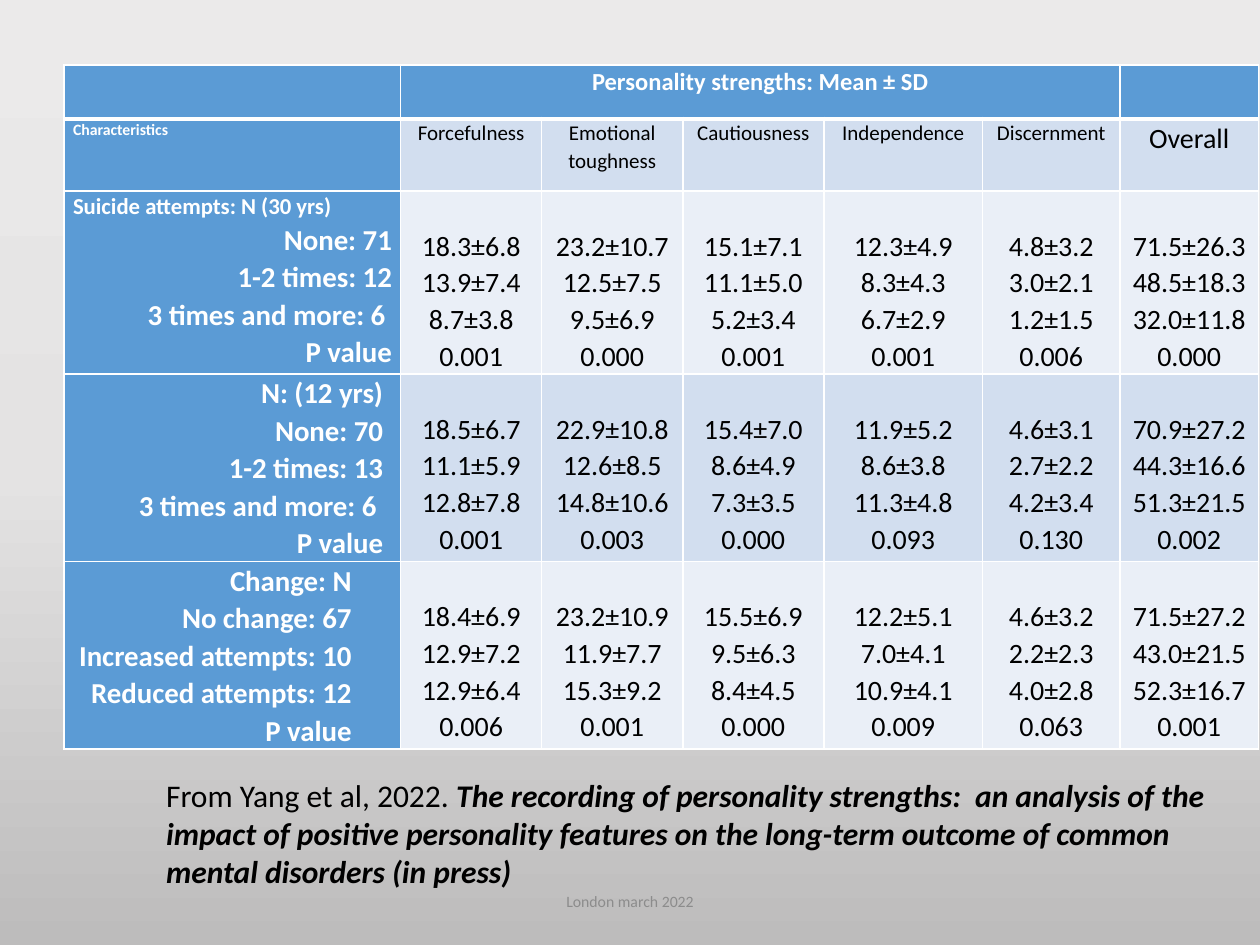
"""Build the slide on personality strengths and suicide attempts."""
import copy
from dataclasses import dataclass

import lxml.etree
import pptx
import pptx.dml.color
import pptx.enum.text
import pptx.oxml.ns
import pptx.util

ALIGN = pptx.enum.text.PP_ALIGN


@dataclass(frozen=True)
class Theme:
    font: str = "Calibri"
    blue: str = "5B9BD5"
    mid: str = "D2DEEF"
    pale: str = "EAEFF7"
    white: str = "FFFFFF"
    black: str = "000000"
    gray: str = "8C8C8C"
    back: tuple = ((0, "EBEAEA"), (0.5, "E4E3E3"), (1, "BDBCBC"))
    tiny: float = 9
    small: float = 12
    group: float = 13
    head: float = 14
    body: float = 16
    label: float = 16.5
    cite: float = 18


@dataclass(frozen=True)
class Style:
    size: float
    color: str
    bold: bool = False
    align: ALIGN = ALIGN.CENTER
    space: float = 1.07


@dataclass(frozen=True)
class Band:
    title: str
    style: Style
    labels: tuple
    values: tuple
    fill: str
    right: float = 0.07
    shift: float = 0


THEME = Theme()
WIDE, HIGH = pptx.util.Inches(10), pptx.util.Inches(7.5)
COLS = (0.267, 0.112, 0.112, 0.112, 0.126, 0.109, 0.11)
ROWS = (0.057, 0.076, 0.173, 0.173, 0.173)
NAMES = ("Forcefulness", "Emotional toughness", "Cautiousness",
         "Independence", "Discernment", "Overall")
HEAD = Style(THEME.head, THEME.white, True)
NAME = Style(THEME.small, THEME.black)
TOTAL = Style(THEME.body, THEME.black)
NOTE = Style(THEME.tiny, THEME.white, True, ALIGN.LEFT)
GROUP = Style(THEME.group, THEME.white, True, ALIGN.LEFT)
LABEL = Style(THEME.label, THEME.white, True, ALIGN.RIGHT)
FOOT = Style(THEME.tiny, THEME.gray, space=1)
CITE = Style(THEME.cite, THEME.black, align=ALIGN.LEFT, space=1)
TIMES = "3 times and more: 6 "
BANDS = (
    Band("Suicide attempts: N (30 yrs)", GROUP,
         ("None: 71", "1-2 times: 12", TIMES, "P value"),
         ("18.3±6.8 13.9±7.4 8.7±3.8 0.001", "23.2±10.7 12.5±7.5 9.5±6.9 0.000",
          "15.1±7.1 11.1±5.0 5.2±3.4 0.001", "12.3±4.9 8.3±4.3 6.7±2.9 0.001",
          "4.8±3.2 3.0±2.1 1.2±1.5 0.006", "71.5±26.3 48.5±18.3 32.0±11.8 0.000"),
         THEME.pale),
    Band("N: (12 yrs)", LABEL,
         ("None: 70", "1-2 times: 13", TIMES, "P value"),
         ("18.5±6.7 11.1±5.9 12.8±7.8 0.001", "22.9±10.8 12.6±8.5 14.8±10.6 0.003",
          "15.4±7.0 8.6±4.9 7.3±3.5 0.000", "11.9±5.2 8.6±3.8 11.3±4.8 0.093",
          "4.6±3.1 2.7±2.2 4.2±3.4 0.130", "70.9±27.2 44.3±16.6 51.3±21.5 0.002"),
         THEME.mid, 0.14),
    Band("Change: N", LABEL,
         ("No change: 67", "Increased attempts: 10", "Reduced attempts: 12", "P value"),
         ("18.4±6.9 12.9±7.2 12.9±6.4 0.006", "23.2±10.9 11.9±7.7 15.3±9.2 0.001",
          "15.5±6.9 9.5±6.3 8.4±4.5 0.000", "12.2±5.1 7.0±4.1 10.9±4.1 0.009",
          "4.6±3.2 2.2±2.3 4.0±2.8 0.063", "71.5±27.2 43.0±21.5 52.3±16.7 0.001"),
         THEME.pale, 0.14, 0.25),
)
LEAD = "From Yang et al, 2022. "
LINES = ("The recording of personality strengths:  an analysis of the",
         "impact of positive personality features on the long-term outcome of common",
         "mental disorders (in press)")


def tint(code: str) -> pptx.dml.color.RGBColor:
    return pptx.dml.color.RGBColor.from_string(code)


def dress(para, style: Style) -> None:
    para.alignment, para.line_spacing = style.align, style.space
    font = para.font
    font.name, font.size, font.bold = THEME.font, pptx.util.Pt(style.size), style.bold
    font.color.rgb = tint(style.color)


def write(frame, lines, style: Style) -> None:
    for num, line in enumerate(lines):
        para = frame.add_paragraph() if num else frame.paragraphs[0]
        para.add_run().text = line
        dress(para, style)


def edge(cell, base: float) -> None:
    props = cell._tc.get_or_add_tcPr()
    name = pptx.oxml.ns.qn
    for side in "LRTB":
        width = base if side == "B" else 1
        line = lxml.etree.SubElement(props, name(f"a:ln{side}"), w=str(pptx.util.Pt(width)))
        fill = lxml.etree.SubElement(line, name("a:solidFill"))
        lxml.etree.SubElement(fill, name("a:srgbClr"), val=THEME.white)


def paint(cell, color: str, base: float = 1) -> None:
    cell.margin_left = cell.margin_right = pptx.util.Inches(0.07)
    cell.margin_top = cell.margin_bottom = 0
    edge(cell, base)
    cell.fill.solid()
    cell.fill.fore_color.rgb = tint(color)


def fill_band(grid, row: int, band: Band) -> None:
    cell = grid.cell(row, 0)
    paint(cell, THEME.blue)
    cell.margin_right = pptx.util.Inches(band.right)
    write(cell.text_frame, (band.title, *band.labels), LABEL)
    first = cell.text_frame.paragraphs[0]
    dress(first, band.style)
    if band.shift:
        first._p.get_or_add_pPr().set("marR", str(pptx.util.Inches(band.shift)))
    for col, text in enumerate(band.values, 1):
        cell = grid.cell(row, col)
        paint(cell, band.fill)
        cell.margin_top = pptx.util.Inches(0.29)
        write(cell.text_frame, text.split(), TOTAL)


def add_grid(slide) -> None:
    grid = slide.shapes.add_table(
        len(ROWS), len(COLS), int(0.051 * WIDE), int(0.069 * HIGH),
        int(sum(COLS) * WIDE), int(sum(ROWS) * HIGH)).table
    grid.first_row = grid.horz_banding = False
    for col, share in zip(grid.columns, COLS):
        col.width = int(share * WIDE)
    for row, share in zip(grid.rows, ROWS):
        row.height = int(share * HIGH)
    for col in range(len(COLS)):
        paint(grid.cell(0, col), THEME.blue, 3)
    grid.cell(0, 1).merge(grid.cell(0, 5))
    write(grid.cell(0, 1).text_frame, ["Personality strengths: Mean ± SD"], HEAD)
    paint(grid.cell(1, 0), THEME.blue)
    write(grid.cell(1, 0).text_frame, ["Characteristics"], NOTE)
    for col, name in enumerate(NAMES, 1):
        paint(grid.cell(1, col), THEME.mid)
        write(grid.cell(1, col).text_frame, [name], TOTAL if col == len(NAMES) else NAME)
    for row, band in enumerate(BANDS, 2):
        fill_band(grid, row, band)


def add_box(slide, left: float, top: float, width: float, height: float):
    return slide.shapes.add_textbox(int(left * WIDE), int(top * HIGH),
                                    int(width * WIDE), int(height * HIGH)).text_frame


def add_notes(slide) -> None:
    foot = add_box(slide, 0.331, 0.927, 0.338, 0.053)
    foot.word_wrap = True
    foot.vertical_anchor = pptx.enum.text.MSO_ANCHOR.MIDDLE
    write(foot, ["London march 2022"], FOOT)
    cite = add_box(slide, 0.122, 0.815, 0.86, 0.175)
    cite.word_wrap = False
    write(cite, (LEAD, *LINES[1:]), CITE)
    cite.paragraphs[0].add_run().text = LINES[0]
    for run in (cite.paragraphs[0].runs[1], *(p.runs[0] for p in cite.paragraphs[1:])):
        run.font.bold = run.font.italic = True


def set_back(slide) -> None:
    fill = slide.background.fill
    fill.gradient()
    fill.gradient_angle = 270
    last = fill.gradient_stops[1]._gs
    last.addprevious(copy.deepcopy(last))
    for stop, (place, code) in zip(fill.gradient_stops, THEME.back):
        stop.position = place
        stop.color.rgb = tint(code)


def main() -> None:
    deck = pptx.Presentation()
    deck.slide_width, deck.slide_height = WIDE, HIGH
    slide = deck.slides.add_slide(deck.slide_layouts[6])
    set_back(slide)
    add_grid(slide)
    add_notes(slide)
    deck.save("out.pptx")


if __name__ == "__main__":
    main()
